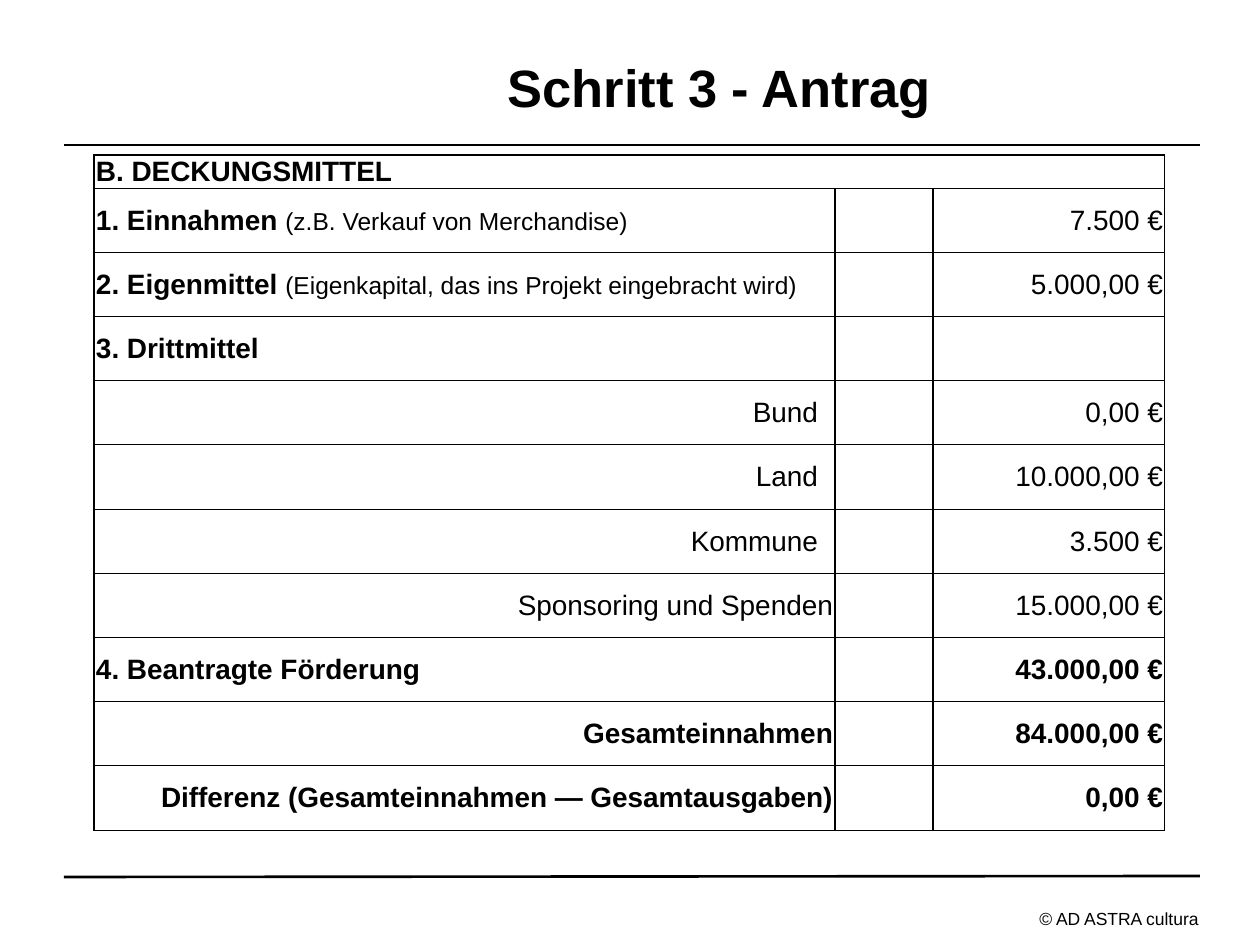
from dataclasses import dataclass

from lxml import etree
from pptx import Presentation
from pptx import util as u
from pptx.dml.color import RGBColor
from pptx.enum import shapes, text
from pptx.oxml import ns

LEFT, RIGHT = text.PP_ALIGN.LEFT, text.PP_ALIGN.RIGHT


@dataclass(frozen=True)
class Theme:
    font: str = "Arial"
    ink: str = "000000"
    paper: str = "FFFFFF"
    title: int = 30
    body: int = 16
    note: int = 14
    foot: int = 10
    rule: float = 1.5
    edge: float = 0.75


def px(n):
    return u.Emu(round(n * 914400 / 126))


class Page:
    """Holds the theme and the current slide, and draws each kind of element."""

    def __init__(self, deck, theme):
        self.theme = theme
        self.slide = deck.slides.add_slide(deck.slide_layouts[6])

    def words(self, frame, runs, align=LEFT):
        para = frame.paragraphs[0]
        para.alignment = align
        for words, size, bold in runs:
            run = para.add_run()
            run.text = words
            font = run.font
            font.name, font.size, font.bold = self.theme.font, u.Pt(size), bold
            font.color.rgb = RGBColor.from_string(self.theme.ink)

    def label(self, box, runs, align=LEFT):
        frame = self.slide.shapes.add_textbox(*map(px, box)).text_frame
        frame.word_wrap = True
        frame.vertical_anchor = text.MSO_ANCHOR.MIDDLE
        self.words(frame, runs, align)

    def rule(self, *ends):
        line = self.slide.shapes.add_connector(
            shapes.MSO_CONNECTOR.STRAIGHT, *map(px, ends))
        line.line.color.rgb = RGBColor.from_string(self.theme.ink)
        line.line.width = u.Pt(self.theme.rule)
        etree.SubElement(line._element.spPr, ns.qn("a:effectLst"))

    def border(self, cell):
        props = cell._tc.get_or_add_tcPr()
        for i, side in enumerate(("lnL", "lnR", "lnT", "lnB")):
            line = etree.Element(ns.qn("a:" + side), w=str(u.Pt(self.theme.edge)))
            fill = etree.SubElement(line, ns.qn("a:solidFill"))
            etree.SubElement(fill, ns.qn("a:srgbClr"), val=self.theme.ink)
            props.insert(i, line)

    def cell(self, cell, runs, align=LEFT, inset=2):
        cell.margin_left, cell.margin_right = px(2), px(inset)
        cell.margin_top = cell.margin_bottom = 0
        cell.vertical_anchor = text.MSO_ANCHOR.MIDDLE
        cell.fill.solid()
        cell.fill.fore_color.rgb = RGBColor.from_string(self.theme.paper)
        self.border(cell)
        self.words(cell.text_frame, runs, align)

    def table(self, left, top, cols, rows):
        grid = self.slide.shapes.add_table(
            len(rows), len(cols), px(left), px(top), px(sum(cols)), px(sum(rows))).table
        grid.first_row = grid.horz_banding = False
        for col, wide in zip(grid.columns, cols):
            col.width = px(wide)
        for row, high in zip(grid.rows, rows):
            row.height = px(high)
        return grid


def main():
    theme = Theme()
    deck = Presentation()
    deck.slide_width, deck.slide_height = px(1260), px(945)
    page = Page(deck, theme)

    page.rule(64, 145, 1200, 145)
    page.label((1027, 901, 190, 34), [("© AD ASTRA cultura", theme.foot, False)])
    page.rule(64, 877, 1200, 876)
    page.label((242, 8, 955, 158), [("Schritt 3 - Antrag", theme.title, True)],
               text.PP_ALIGN.CENTER)

    funds = [
        ("B. DECKUNGSMITTEL", "", "", True, False, LEFT, 2),
        ("1. Einnahmen ", "(z.B. Verkauf von Merchandise)", "7.500 €", True, False, LEFT, 2),
        ("2. Eigenmittel ", "(Eigenkapital, das ins Projekt eingebracht wird)",
         "5.000,00 €", True, False, LEFT, 2),
        ("3. Drittmittel", "", "", True, False, LEFT, 2),
        ("Bund", "", "0,00 €", False, False, RIGHT, 17),
        ("Land", "", "10.000,00 €", False, False, RIGHT, 17),
        ("Kommune", "", "3.500 €", False, False, RIGHT, 17),
        ("Sponsoring und Spenden", "", "15.000,00 €", False, False, RIGHT, 2),
        ("4. Beantragte Förderung", "", "43.000,00 €", True, True, LEFT, 2),
        ("Gesamteinnahmen", "", "84.000,00 €", True, True, RIGHT, 2),
        ("Differenz (Gesamteinnahmen — Gesamtausgaben)", "", "0,00 €", True, True, RIGHT, 2),
    ]
    count = len(funds) - 1
    edges = [642 * i // count for i in range(count + 1)]
    rows = [32] + [low - high for high, low in zip(edges, edges[1:])]
    grid = page.table(94, 155, (741, 98, 232), rows)
    for i, (name, note, cost, bold, strong, align, inset) in enumerate(funds):
        runs = [(name, theme.body, bold)]
        if note:
            runs.append((note, theme.note, False))
        page.cell(grid.cell(i, 0), runs, align, inset)
        page.cell(grid.cell(i, 1), [])
        page.cell(grid.cell(i, 2), [(cost, theme.body, strong)] if cost else [], RIGHT)
    grid.cell(0, 0).merge(grid.cell(0, 2))

    deck.save("out.pptx")


if __name__ == "__main__":
    main()
